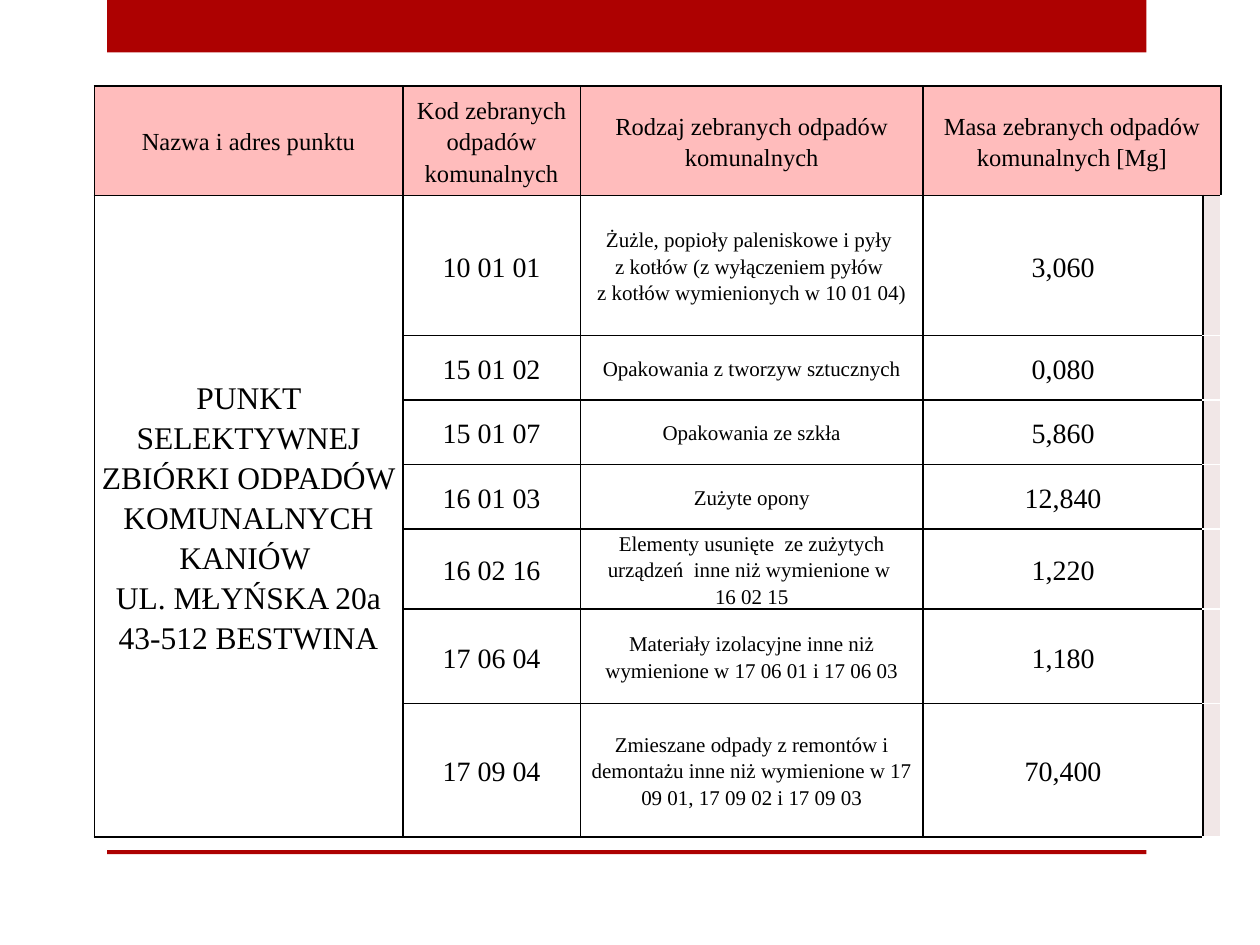
"""Builds the slide with the table of municipal waste masses collected in Kaniów."""
from dataclasses import dataclass
from typing import Optional

from lxml.etree import SubElement
from pptx import Presentation
from pptx.dml.color import RGBColor
from pptx.enum.shapes import MSO_SHAPE as Preset
from pptx.enum.text import MSO_ANCHOR as Anchor, PP_ALIGN as Align
from pptx.oxml.ns import qn
from pptx.util import Cm, Pt

RED = RGBColor(0xAD, 0x01, 0x01)
PINK = RGBColor(0xFF, 0xBC, 0xBC)
PALE = RGBColor(0xF1, 0xE7, 0xE7)
BLACK = RGBColor(0, 0, 0)
WHITE = RGBColor(0xFF, 0xFF, 0xFF)
FONT = "Times New Roman"

COLUMN_WIDTHS = (6.22, 3.58, 6.91, 5.64, 0.25)
HEADER_HEIGHT = 2.21
HEADERS = (
    "Nazwa i adres punktu",
    "Kod zebranych odpadów komunalnych",
    "Rodzaj zebranych odpadów komunalnych",
    "Masa zebranych odpadów komunalnych [Mg]",
)
COLLECTION_POINT = (
    "PUNKT SELEKTYWNEJ ZBIÓRKI ODPADÓW KOMUNALNYCH KANIÓW \v"
    "UL. MŁYŃSKA 20a\n43-512 BESTWINA"
)


@dataclass(frozen=True)
class Bar:
    top: float
    height: float


@dataclass(frozen=True)
class Waste:
    code: str
    kind: str
    mass: str
    height: float


BARS = (Bar(0, 1.06), Bar(17.14, 0.08))
WASTES = (
    Waste("10 01 01", "Żużle, popioły paleniskowe i pyły \vz kotłów (z wyłączeniem pyłów \v"
          "z kotłów wymienionych w 10 01 04)", "3,060", 2.82),
    Waste("15 01 02", "Opakowania z tworzyw sztucznych", "0,080", 1.3),
    Waste("15 01 07", "Opakowania ze szkła", "5,860", 1.3),
    Waste("16 01 03", "Zużyte opony", "12,840", 1.3),
    Waste("16 02 16", "Elementy usunięte  ze zużytych urządzeń  inne niż wymienione w \v"
          "16 02 15", "1,220", 1.62),
    Waste("17 06 04", "Materiały izolacyjne inne niż wymienione w 17 06 01 i 17 06 03",
          "1,180", 1.9),
    Waste("17 09 04", "Zmieszane odpady z remontów i demontażu inne niż wymienione w "
          "17 09 01, 17 09 02 i 17 09 03", "70,400", 2.69),
)


def draw_bar(page, bar: Bar) -> None:
    shape = page.shapes.add_shape(
        Preset.RECTANGLE, Cm(2.16), Cm(bar.top), Cm(20.95), Cm(bar.height))
    shape.shadow.inherit = False
    shape.fill.solid()
    shape.fill.fore_color.rgb = RED
    shape.line.fill.background()


def style_cell(cell, fill: Optional[RGBColor] = None, left: RGBColor = BLACK,
               right: RGBColor = BLACK, top: RGBColor = BLACK,
               bottom: RGBColor = BLACK) -> None:
    cell.margin_left = cell.margin_right = Cm(0.13)
    cell.margin_top = cell.margin_bottom = 0
    cell.vertical_anchor = Anchor.MIDDLE
    properties = cell._tc.get_or_add_tcPr()
    for side, color in zip("LRTB", (left, right, top, bottom)):
        line = SubElement(properties, qn(f"a:ln{side}"), w=str(Pt(1)))
        solid = SubElement(line, qn("a:solidFill"))
        SubElement(solid, qn("a:srgbClr"), val=str(color))
    if fill is None:
        cell.fill.background()
    else:
        cell.fill.solid()
        cell.fill.fore_color.rgb = fill


def write_cell(cell, text: str, size: int) -> None:
    cell.text = text
    for para in cell.text_frame.paragraphs:
        para.alignment = Align.CENTER
        para.line_spacing = 1.15
        para.font.name = FONT
        para.font.size = Pt(size)
        para.font.color.rgb = BLACK


def draw_table(page) -> None:
    heights = (HEADER_HEIGHT, *(waste.height for waste in WASTES))
    frame = page.shapes.add_table(
        len(heights), len(COLUMN_WIDTHS), Cm(1.9), Cm(1.73),
        Cm(sum(COLUMN_WIDTHS)), Cm(sum(heights)))
    table = frame.table
    table.first_row = table.horz_banding = False
    for column, width in zip(table.columns, COLUMN_WIDTHS):
        column.width = Cm(width)
    for row, height in zip(table.rows, heights):
        row.height = Cm(height)

    strip = len(COLUMN_WIDTHS) - 1
    for column in range(len(COLUMN_WIDTHS)):
        style_cell(table.cell(0, column), PINK)
    for column, header in enumerate(HEADERS):
        write_cell(table.cell(0, column), header, 14)
    for row, waste in enumerate(WASTES, start=1):
        for column in range(strip):
            style_cell(table.cell(row, column))
        style_cell(table.cell(row, strip), PALE, right=WHITE,
                   top=BLACK if row == 1 else WHITE, bottom=WHITE)
        write_cell(table.cell(row, 1), waste.code, 16)
        write_cell(table.cell(row, 2), waste.kind, 12)
        write_cell(table.cell(row, 3), waste.mass, 16)

    table.cell(0, strip - 1).merge(table.cell(0, strip))
    table.cell(1, 0).merge(table.cell(len(WASTES), 0))
    write_cell(table.cell(1, 0), COLLECTION_POINT, 18)


def main() -> None:
    deck = Presentation()
    deck.slide_width, deck.slide_height = Cm(25.4), Cm(19.05)
    page = deck.slides.add_slide(deck.slide_layouts[6])
    for bar in BARS:
        draw_bar(page, bar)
    draw_table(page)
    deck.save("out.pptx")


if __name__ == "__main__":
    main()
